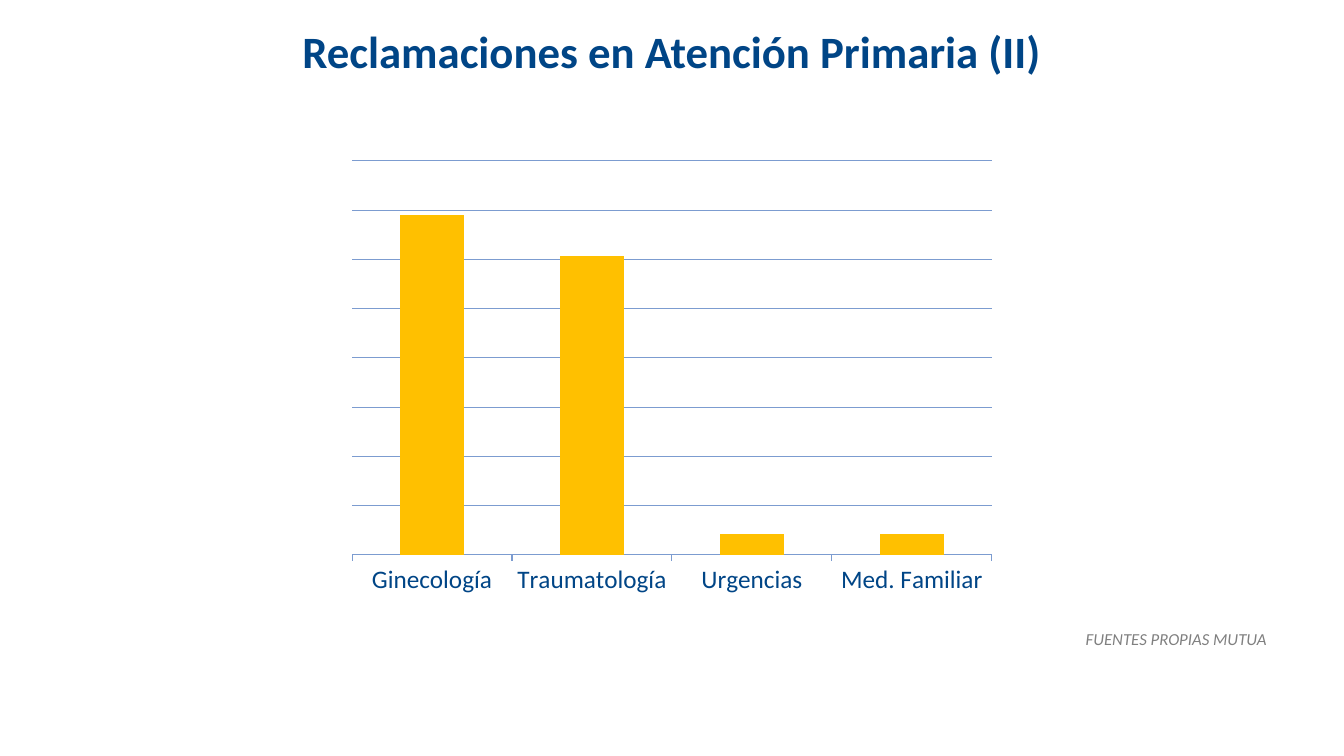
"""Build the slide on claims in primary care with its column chart."""
from lxml.etree import SubElement
from pptx import Presentation
from pptx.chart.data import CategoryChartData
from pptx.dml.color import RGBColor
from pptx.enum.chart import XL_CHART_TYPE, XL_TICK_MARK
from pptx.enum.text import MSO_ANCHOR, PP_ALIGN
from pptx.oxml.ns import qn
from pptx.util import Pt

TITLE = "Reclamaciones en Atención Primaria (II)"
SOURCE = "FUENTES PROPIAS MUTUA"
CLAIMS = {"Ginecología": 100, "Traumatología": 88, "Urgencias": 6, "Med. Familiar": 6}

NAVY, GOLD, GRAY, RULE = "004586", "FFC000", "808080", "7C9CD0"
TITLE_BOX = (48, 12.5, 864, 47.5)
SOURCE_BOX = (480, 445, 432, 23)
CHART_BOX = (242, 108.5, 476, 323.5)
PLOT_AREA = {"x": 0.02, "y": 0.02, "w": 0.96, "h": 0.87}
AXIS_TOP, GRID_STEPS = 116, 8


def color(value):
    return RGBColor.from_string(value)


def apply(target, formats):
    for name, value in formats.items():
        setattr(target, name, value)


def set_font(font, size, value, **formats):
    apply(font, {"name": "Calibri", "size": Pt(size), **formats})
    font.color.rgb = color(value)


def set_text(box, text, align, size, value, **formats):
    frame = box.text_frame
    apply(frame, {"text": text, "word_wrap": True, "vertical_anchor": MSO_ANCHOR.MIDDLE})
    line = frame.paragraphs[0]
    line.alignment = align
    set_font(line.runs[0].font, size, value, **formats)


def set_plot_area(chart, area):
    plot_area = chart.plots[0]._element.getparent()
    layout = plot_area.find(qn("c:layout"))
    if layout is None:
        layout = SubElement(plot_area, qn("c:layout"))
        plot_area.insert(0, layout)
    manual = SubElement(layout, qn("c:manualLayout"))
    settings = {"layoutTarget": "inner", "xMode": "edge", "yMode": "edge", **area}
    for name, value in settings.items():
        SubElement(manual, qn(f"c:{name}")).set("val", str(value))


def add_claims_chart(slide):
    claims = CategoryChartData()
    claims.categories = list(CLAIMS)
    claims.add_series("Series 1", list(CLAIMS.values()))
    chart = slide.shapes.add_chart(
        XL_CHART_TYPE.COLUMN_STACKED, *map(Pt, CHART_BOX), claims
    ).chart
    apply(chart, {"has_title": False, "has_legend": False})
    set_font(chart.font, 18, NAVY)
    bars = chart.plots[0]
    apply(bars, {"gap_width": 150, "overlap": 100, "vary_by_categories": False})
    fill = bars.series[0].format.fill
    fill.solid()
    fill.fore_color.rgb = color(GOLD)

    specialties, counts = chart.category_axis, chart.value_axis
    apply(specialties, {"major_tick_mark": XL_TICK_MARK.OUTSIDE, "has_major_gridlines": False})
    set_font(specialties.tick_labels.font, 18, NAVY)
    apply(counts, {
        "visible": False,
        "has_major_gridlines": True,
        "minimum_scale": 0,
        "maximum_scale": AXIS_TOP,
        "major_unit": AXIS_TOP / GRID_STEPS,
    })
    for rule in (specialties.format.line, counts.major_gridlines.format.line):
        rule.width = Pt(0.75)
        rule.color.rgb = color(RULE)
    set_plot_area(chart, PLOT_AREA)


def main():
    deck = Presentation()
    apply(deck, {"slide_width": Pt(960), "slide_height": Pt(540)})
    slide = deck.slides.add_slide(deck.slide_layouts[5])
    title = slide.shapes.title
    apply(title, dict(zip(("left", "top", "width", "height"), map(Pt, TITLE_BOX))))
    set_text(title, TITLE, PP_ALIGN.CENTER, 32, NAVY, bold=True)
    add_claims_chart(slide)
    source = slide.shapes.add_textbox(*map(Pt, SOURCE_BOX))
    set_text(source, SOURCE, PP_ALIGN.RIGHT, 12, GRAY, italic=True)
    deck.save("out.pptx")


if __name__ == "__main__":
    main()
